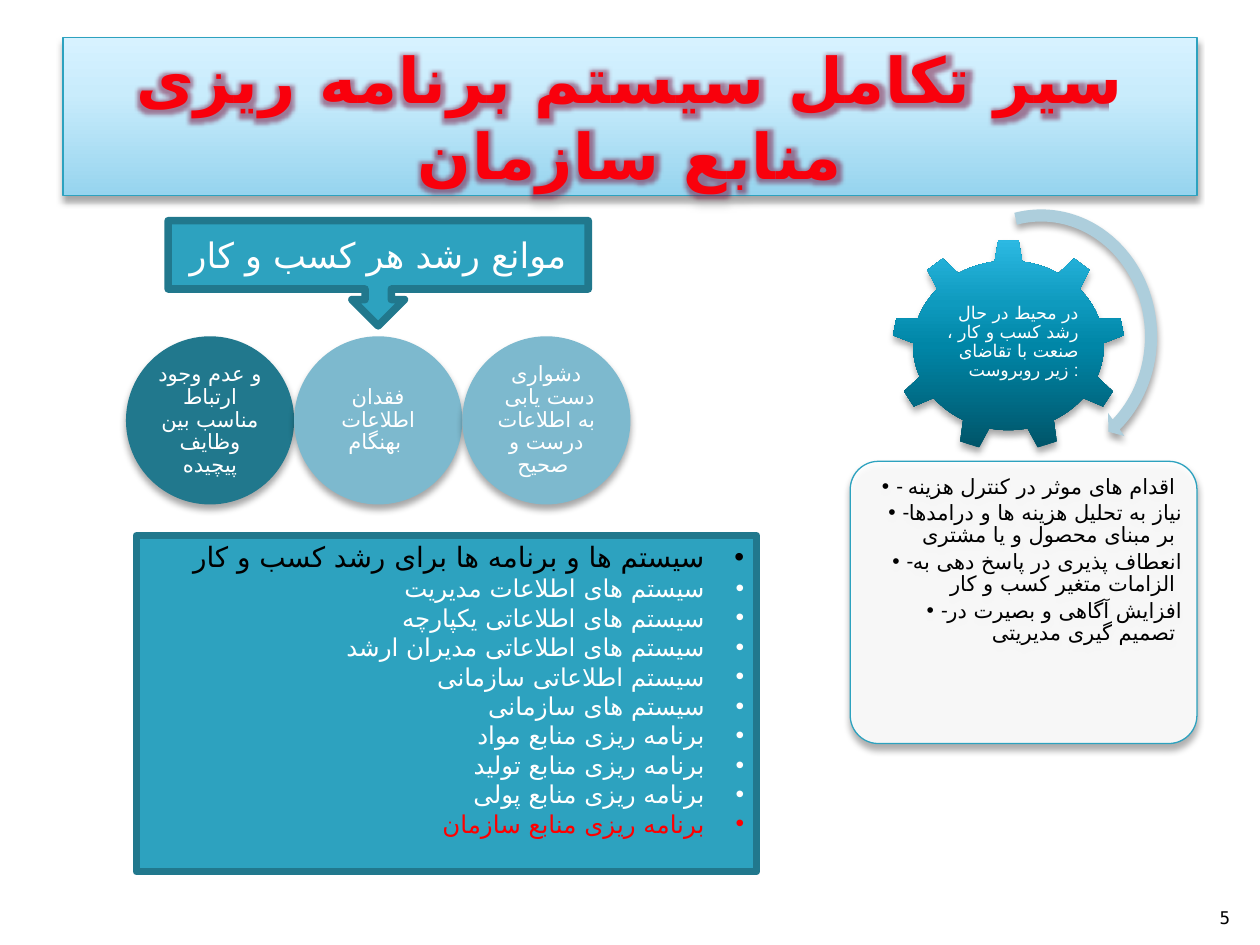
from lxml import etree
from pptx import Presentation
from pptx.dml.color import RGBColor
from pptx.enum.shapes import MSO_SHAPE
from pptx.enum.text import MSO_ANCHOR, MSO_AUTO_SIZE, PP_ALIGN
from pptx.oxml import parse_xml
from pptx.oxml.ns import nsdecls, qn
from pptx.util import Cm, Pt

CENTER, RIGHT = PP_ALIGN.CENTER, PP_ALIGN.RIGHT
TOP, MIDDLE, BOTTOM = MSO_ANCHOR.TOP, MSO_ANCHOR.MIDDLE, MSO_ANCHOR.BOTTOM
WHITE = RGBColor(0xFF, 0xFF, 0xFF)
BLACK = RGBColor(0, 0, 0)
RED = RGBColor(0xFF, 0, 0)
TITLE_RED = RGBColor(0xF9, 0, 0x0C)
TEAL = RGBColor(0x2D, 0xA2, 0xBF)
DARK_TEAL = RGBColor(0x21, 0x78, 0x8D)
LIGHT_TEAL = RGBColor(0x7D, 0xB9, 0xCE)
PALE_TEAL = RGBColor(0xAD, 0xCE, 0xDC)
GEAR_STOPS = [(0, RGBColor(0, 0x53, 0x67)), (50, RGBColor(0, 0x86, 0xA7)),
              (70, RGBColor(0x0E, 0x9A, 0xBE)), (100, RGBColor(0x2C, 0xB9, 0xE3))]
TITLE_STOPS = [(0, RGBColor(0x96, 0xD4, 0xEE)), (65, RGBColor(0xC9, 0xEC, 0xFC)),
               (100, RGBColor(0xD7, 0xF2, 0xFF))]
FONT = "Roboto"
ARABIC_FONT = "DejaVu Sans"
NS = nsdecls("a")


def paint(shape, fill, line=None, width=0.75, shadow=True):
    if isinstance(fill, list):
        shape.fill.gradient()
        shape.fill.gradient_angle = 90
        stops = shape._element.spPr.find(".//" + qn("a:gsLst"))
        for stop in list(stops):
            stops.remove(stop)
        for position, color in fill:
            stops.append(parse_xml(f'<a:gs {NS} pos="{position * 1000}">'
                                   f'<a:srgbClr val="{color}"/></a:gs>'))
    else:
        shape.fill.solid()
        shape.fill.fore_color.rgb = fill
    if line is None:
        shape.line.fill.background()
    else:
        shape.line.color.rgb = line
        shape.line.width = Pt(width)
    shape.shadow.inherit = False
    if shadow:
        shape._element.spPr.find(qn("a:effectLst")).append(parse_xml(
            f'<a:outerShdw {NS} blurRad="50800" dist="38100" dir="5400000" rotWithShape="0">'
            '<a:srgbClr val="000000"><a:alpha val="35000"/></a:srgbClr></a:outerShdw>'))


def write(shape, lines, size, color, align=CENTER, anchor=MIDDLE, inset=None,
          spacing=None, indent=None, rtl=False, font=FONT):
    frame = shape.text_frame
    frame.text = "\n".join(lines)
    frame.word_wrap = True
    frame.auto_size = MSO_AUTO_SIZE.NONE
    frame.vertical_anchor = anchor
    if inset is not None:
        frame.margin_left = frame.margin_right = Cm(inset)
        frame.margin_top = frame.margin_bottom = Cm(inset)
    for paragraph in frame.paragraphs:
        paragraph.alignment = align
        if spacing:
            paragraph.line_spacing = spacing
        properties = paragraph._p.get_or_add_pPr()
        if rtl:
            properties.set("rtl", "1")
        if indent:
            properties.set("marL", str(Cm(indent)))
            properties.set("indent", str(-Cm(indent)))
            etree.SubElement(properties, qn("a:buFont")).set("typeface", "Arial")
            etree.SubElement(properties, qn("a:buChar")).set("char", "•")
        for run in paragraph.runs:
            run.font.size = Pt(size)
            run.font.color.rgb = color
            run.font.name = font
            etree.SubElement(run._r.get_or_add_rPr(), qn("a:cs")).set("typeface", ARABIC_FONT)


prs = Presentation()
prs.slide_width, prs.slide_height = Cm(25.4), Cm(19.05)
slide = prs.slides.add_slide(prs.slide_layouts[5])
shapes = slide.shapes

title = shapes.title
title.left, title.top, title.width, title.height = Cm(1.27), Cm(0.76), Cm(22.86), Cm(3.18)
paint(title, TITLE_STOPS, TEAL)
write(title, ["سیر تکامل سیستم برنامه ریزی منابع سازمان"], 36, TITLE_RED, rtl=True)
title_run = title.text_frame.paragraphs[0].runs[0]
title_run.font.bold = True
title_properties = title_run._r.get_or_add_rPr()
title_properties.set("spc", "50")
title_properties.find(qn("a:solidFill")).addnext(parse_xml(
    f'<a:effectLst {NS}><a:glow rad="127000"><a:srgbClr val="7A0A35">'
    '<a:alpha val="50000"/></a:srgbClr></a:glow></a:effectLst>'))

gear = shapes.add_shape(MSO_SHAPE.GEAR_9, Cm(17.98), Cm(4.83), Cm(4.7), Cm(4.27))
paint(gear, GEAR_STOPS)
demand_intro = shapes.add_textbox(Cm(18.9), Cm(5.82), Cm(2.87), Cm(2.18))
write(demand_intro, [" در محیط در حال رشد کسب و کار ، صنعت با تقاضای زیر روبروست :"],
      10, WHITE, RIGHT, inset=0.03, spacing=0.9)

demands = shapes.add_shape(MSO_SHAPE.ROUNDED_RECTANGLE, Cm(17.14), Cm(9.3), Cm(6.99), Cm(5.69))
demands.adjustments[0] = 0.1
paint(demands, WHITE, TEAL)
white_fill = demands._element.spPr.find(qn("a:solidFill")).find(qn("a:srgbClr"))
etree.SubElement(white_fill, qn("a:alpha")).set("val", "90000")
write(demands, [
    "- اقدام های موثر در کنترل هزینه ",
    "-نیاز به تحلیل هزینه ها و درامدها بر مبنای محصول و یا مشتری ",
    "-انعطاف پذیری در پاسخ دهی به الزامات متغیر کسب و کار ",
    "-افزایش آگاهی و بصیرت در تصمیم گیری مدیریتی ",
], 12, BLACK, RIGHT, TOP, inset=0.13, spacing=0.9, indent=0.3)
for demand in demands.text_frame.paragraphs:
    demand.space_after = Pt(2)

growth_arrow = shapes.add_shape(MSO_SHAPE.CIRCULAR_ARROW, Cm(18.49), Cm(4.06), Cm(5), Cm(5.44))
for index, value in enumerate([0.049, 3.126, 29.764, 154.645, 0.057]):
    growth_arrow.adjustments[index] = value
paint(growth_arrow, PALE_TEAL)

DIAMETER = 3.39
obstacles = [
    ("و عدم وجود ارتباط مناسب بین وظایف پیچیده", DARK_TEAL),
    ("فقدان اطلاعات بهنگام ", LIGHT_TEAL),
    ("دشواری دست یابی  به اطلاعات درست و صحیح ", LIGHT_TEAL),
]
for index, (obstacle, color) in enumerate(obstacles):
    circle = shapes.add_shape(MSO_SHAPE.OVAL, Cm(2.54 + index * DIAMETER), Cm(6.78),
                              Cm(DIAMETER), Cm(DIAMETER))
    paint(circle, color)
    write(circle, [obstacle], 12, WHITE, inset=0, spacing=0.9)

obstacles_heading = shapes.add_shape(MSO_SHAPE.DOWN_ARROW_CALLOUT,
                                     Cm(3.39), Cm(4.45), Cm(8.47), Cm(2.12))
paint(obstacles_heading, TEAL, DARK_TEAL, 4.33, shadow=False)
write(obstacles_heading, ["موانع رشد هر کسب و کار"], 20, WHITE)

systems = shapes.add_shape(MSO_SHAPE.FLOWCHART_PROCESS, Cm(2.75), Cm(10.8), Cm(12.5), Cm(6.77))
paint(systems, TEAL, DARK_TEAL, 4.33, shadow=False)
write(systems, [
    "سیستم ها و برنامه ها برای رشد کسب و کار",
    "سیستم های اطلاعات مدیریت",
    "سیستم های اطلاعاتی یکپارچه",
    "سیستم های اطلاعاتی مدیران ارشد",
    "سیستم اطلاعاتی سازمانی",
    "سیستم های سازمانی",
    "برنامه ریزی منابع مواد",
    "برنامه ریزی منابع تولید",
    "برنامه ریزی منابع پولی",
    "برنامه ریزی منابع سازمان",
], 14, WHITE, RIGHT, indent=0.79, rtl=True)
systems.text_frame.margin_bottom = Cm(0.72)
systems_heading = systems.text_frame.paragraphs[0].runs[0].font
systems_heading.size = Pt(16)
systems_heading.color.rgb = BLACK
systems.text_frame.paragraphs[-1].runs[0].font.color.rgb = RED

page_number = shapes.add_textbox(Cm(24.03), Cm(17.81), Cm(1.02), Cm(1.02))
write(page_number, ["5"], 10, BLACK, RIGHT, BOTTOM, font="DejaVu Sans Mono")

prs.save("out.pptx")
